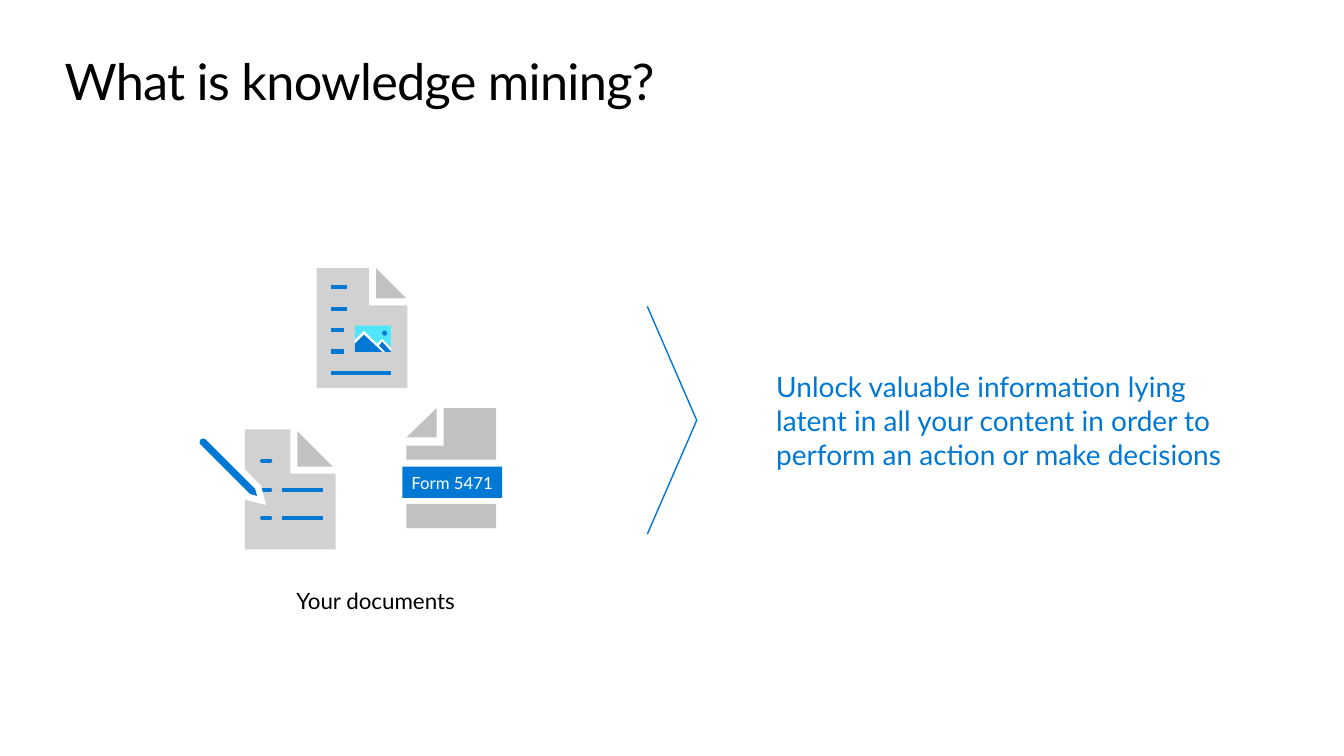
"""Build the knowledge mining slide on a grid of one-inch columns and rows."""
import lxml.etree
import pptx
import pptx.dml.color
import pptx.enum.shapes
import pptx.enum.text
import pptx.oxml.ns
import pptx.util

RGBColor = pptx.dml.color.RGBColor
BLUE = RGBColor(0x00, 0x78, 0xD4)
CYAN = RGBColor(0x50, 0xE6, 0xFF)
LIGHT_GREY = RGBColor(0xD1, 0xD1, 0xD1)
GREY = RGBColor(0xC1, 0xC1, 0xC1)
WHITE = RGBColor(0xFF, 0xFF, 0xFF)
BLACK = RGBColor(0x00, 0x00, 0x00)
COLUMNS, ROWS = 13.33, 7.5
FONT = "Lato"
RECTANGLE = pptx.enum.shapes.MSO_SHAPE.RECTANGLE
OVAL = pptx.enum.shapes.MSO_SHAPE.OVAL


def cells(*counts):
    """Turn counts of grid columns or rows into lengths."""
    return [pptx.util.Inches(count) for count in counts]


def write(box, text, size, color, insets=(0.1, 0.05)):
    """Put one formatted paragraph in a box and return it."""
    frame = box.text_frame
    frame.word_wrap = True
    frame.margin_left = frame.margin_right = pptx.util.Inches(insets[0])
    frame.margin_top = frame.margin_bottom = pptx.util.Inches(insets[1])
    para = frame.paragraphs[0]
    para.text = text
    font = para.runs[0].font
    font.name, font.size, font.color.rgb = FONT, pptx.util.Pt(size), color
    return para


def add_text(page, place, text, size, color, insets=(0.1, 0.05)):
    """Add a text box and return its paragraph."""
    return write(page.shapes.add_textbox(*cells(*place)), text, size, color, insets)


def add_block(page, kind, place, fill):
    """Add a plain filled preset shape."""
    block = page.shapes.add_shape(kind, *cells(*place))
    block.shadow.inherit = False
    block.fill.solid()
    block.fill.fore_color.rgb = fill
    block.line.fill.background()
    return block


def add_outline(page, points, fill=None):
    """Add a closed filled outline, or an open blue one without a fill."""
    corners = [cells(*point) for point in points]
    builder = page.shapes.build_freeform(*corners[0])
    builder.add_line_segments(corners[1:], close=fill is not None)
    outline = builder.convert_to_shape()
    outline.shadow.inherit = False
    if fill is None:
        outline.fill.background()
        outline.line.color.rgb = BLUE
        outline.line.width = pptx.util.Pt(1)
    else:
        outline.fill.solid()
        outline.fill.fore_color.rgb = fill
        outline.line.fill.background()


def add_rule(page, left, right, row, rounded=False):
    """Add a horizontal blue rule that stands for a line of writing."""
    straight = pptx.enum.shapes.MSO_CONNECTOR.STRAIGHT
    rule = page.shapes.add_connector(straight, *cells(left, row, right, row))
    rule.line.color.rgb = BLUE
    rule.line.width = pptx.util.Pt(3)
    properties = rule._element.spPr
    if rounded:
        properties.find(pptx.oxml.ns.qn("a:ln")).set("cap", "rnd")
    lxml.etree.SubElement(properties, pptx.oxml.ns.qn("a:effectLst"))


def add_sheet(page, left, top, notch, fold):
    """Add a light sheet with a notched corner and a folded triangle."""
    right, bottom = left + 0.9, top + 1.19
    inner, lower = left + notch[0], top + notch[1]
    add_outline(page, [(left, top), (inner, top), (inner, lower),
                       (right, lower), (right, bottom), (left, bottom)], LIGHT_GREY)
    x, y, side = fold
    add_outline(page, [(x, y), (x + side, y + side), (x, y + side)], GREY)


def add_handwritten_note(page):
    """Draw the sheet with a pen writing on it."""
    add_sheet(page, 2.43, 4.26, (0.45, 0.44), (2.95, 4.28, 0.35))
    for row in (4.57, 4.86, 5.14):
        add_rule(page, 2.6, 2.68, row, rounded=True)
    for row in (4.86, 5.14):
        add_rule(page, 2.8, 3.2, row)
    add_outline(page, [(2.21, 4.43), (2.11, 4.43), (2.53, 4.85), (2.55, 4.92),
                       (2.48, 4.9), (2.07, 4.5), (2.07, 4.59), (2.44, 4.96),
                       (2.64, 5.01), (2.59, 4.82)], WHITE)
    add_outline(page, [(2.48, 4.9), (1.99, 4.41), (1.98, 4.39), (1.99, 4.36),
                       (2.02, 4.35), (2.04, 4.36), (2.53, 4.85), (2.55, 4.92)], BLUE)


def add_form(page):
    """Draw the form with its blue name band."""
    left, right, top = 4.03, 4.92, 4.05
    add_outline(page, [(right, top), (right, 4.56), (left, 4.56),
                       (left, 4.42), (4.4, 4.42), (4.4, top)], GREY)
    add_block(page, RECTANGLE, (left, 5, right - left, 0.24), GREY)
    add_outline(page, [(4.33, 4.34), (left, 4.34), (4.33, top)], GREY)
    band = add_block(page, RECTANGLE, (3.99, 4.63, 0.99, 0.31), BLUE)
    band.text_frame.vertical_anchor = pptx.enum.text.MSO_ANCHOR.MIDDLE
    para = write(band, "Form 5471", 12, WHITE, (0, 0.05))
    para.alignment = pptx.enum.text.PP_ALIGN.CENTER


def add_illustrated_report(page):
    """Draw the sheet with rules and a small landscape."""
    add_sheet(page, 3.14, 2.66, (0.52, 0.37), (3.73, 2.66, 0.3))
    for index, right in enumerate((3.44, 3.44, 3.41, 3.41, 3.88)):
        add_rule(page, 3.28, right, 2.85 + index * 0.85 / 4)
    left, right, top, ground = 3.52, 3.88, 3.23, 3.49
    add_block(page, RECTANGLE, (left, 3.26, right - left, 0.23), WHITE)
    add_outline(page, [(right, top), (left, top), (left, 3.37), (3.61, 3.28),
                       (3.74, 3.41), (3.79, 3.36), (right, 3.45)], CYAN)
    add_outline(page, [(left, ground), (3.79, ground), (3.61, 3.32), (left, 3.41)], BLUE)
    add_outline(page, [(right, ground), (3.79, 3.39), (3.76, 3.43), (3.82, ground)], BLUE)
    add_block(page, OVAL, (3.79, 3.28, 0.05, 0.05), BLUE)


def main():
    """Build and save the slide."""
    deck = pptx.Presentation()
    deck.slide_width, deck.slide_height = cells(COLUMNS, ROWS)
    page = deck.slides.add_slide(deck.slide_layouts[6])
    title = add_text(page, (0.64, 0.5, 12.05, 0.61), "What is knowledge mining?",
                     36, BLACK, (0, 0))
    title.runs[0]._r.get_or_add_rPr().set("spc", "-50")
    add_handwritten_note(page)
    add_form(page)
    add_illustrated_report(page)
    caption = add_text(page, (2.74, 5.73, 3.93, 0.36), "Your documents",
                       16, BLACK, (0.2, 0.16))
    caption.line_spacing = 0.9
    add_outline(page, [(6.42, 3.04), (6.91, 4.17), (6.42, 5.3)])
    add_text(page, (7.6, 3.62, 4.88, 1.11),
             "Unlock valuable information lying latent in all your content "
             "in order to perform an action or make decisions", 20, BLUE)
    deck.save("out.pptx")


if __name__ == "__main__":
    main()
